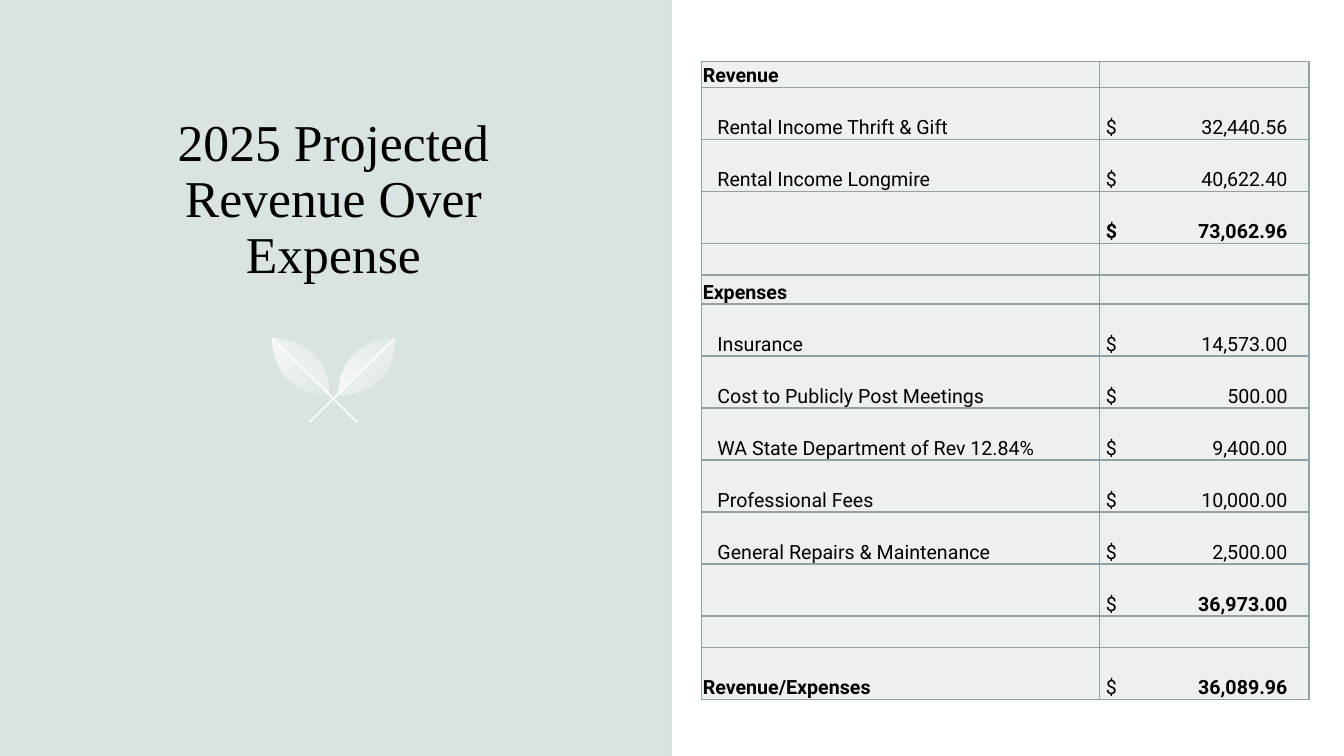
from lxml.etree import SubElement
from pptx import Presentation
from pptx.dml.color import RGBColor
from pptx.enum.shapes import MSO_CONNECTOR as Line, MSO_SHAPE as Shape
from pptx.enum.text import MSO_ANCHOR as Anchor, PP_ALIGN as Align
from pptx.oxml import parse_xml
from pptx.oxml.ns import nsdecls, qn
from pptx.util import Cm, Pt

COLORS = {"mist": "DAE3E3", "white": "FFFFFF", "black": "000000",
          "cell": "EEF0F0", "border": "8FA3A3"}

# label, indented, amount, bold amount, bold dollar sign, row height in cm
TALL = 1.31
ROWS = [
    ("Revenue", False, "", False, False, 0.66),
    ("Rental Income Thrift & Gift", True, "32,440.56", False, False, TALL),
    ("Rental Income Longmire", True, "40,622.40", False, False, TALL),
    ("", False, "73,062.96", True, True, TALL),
    ("", False, "", False, False, 0.79),
    ("Expenses", False, "", False, False, 0.73),
    ("Insurance", True, "14,573.00", False, False, TALL),
    ("Cost to Publicly Post Meetings", True, "500.00", False, False, TALL),
    ("WA State Department of Rev 12.84%", True, "9,400.00", False, False, TALL),
    ("Professional Fees", True, "10,000.00", False, False, TALL),
    ("General Repairs & Maintenance", True, "2,500.00", False, False, TALL),
    ("", False, "36,973.00", True, False, TALL),
    ("", False, "", False, False, 0.79),
    ("Revenue/Expenses", False, "36,089.96", True, False, TALL),
]

# Upper half of the right leaf: two Bezier curves from tip to base, in cm
LEAF_CURVES = [
    [(9.93, 8.53), (9.58, 8.51), (9.19, 8.64), (8.92, 8.92)],
    [(8.92, 8.92), (8.64, 9.19), (8.51, 9.55), (8.53, 9.93)],
]
STEM = [(7.8, 10.64), (9.93, 8.53)]
MIDRIB_SUM = 18.46   # x + y along the midrib
SPRIG_SUM = 16.8     # x of a point plus x of its mirror image


def rgb(name):
    return RGBColor.from_string(COLORS[name])


def add_run(p, text, size=14, font="Roboto", color="black", bold=False):
    r = p.add_run()
    r.text = text
    r.font.size, r.font.name, r.font.bold = Pt(size), font, bold
    r.font.color.rgb = rgb(color)


def add_title(s, text):
    sp = s.shapes.title
    sp.left, sp.top, sp.width, sp.height = Cm(2.74), Cm(3.02), Cm(11.33), Cm(4.27)
    tf = sp.text_frame
    tf.word_wrap, tf.vertical_anchor = True, Anchor.BOTTOM
    p = tf.paragraphs[0]
    p.alignment, p.line_spacing = Align.CENTER, 0.9
    add_run(p, text, size=36.9, font="Times New Roman")


def add_panel(s, x, y, w, h, color):
    sp = s.shapes.add_shape(Shape.RECTANGLE, Cm(x), Cm(y), Cm(w), Cm(h))
    sp.shadow.inherit = False
    sp.fill.solid()
    sp.fill.fore_color.rgb = rgb(color)
    sp.line.fill.background()


def bezier(points, steps=12):
    a, b, c, d = points
    for i in range(steps + 1):
        t = i / steps
        u = 1 - t
        yield tuple(u**3 * a[k] + 3 * u*u*t * b[k] + 3 * u*t*t * c[k] + t**3 * d[k]
                    for k in (0, 1))


def across_midrib(points):
    return [(MIDRIB_SUM - y, MIDRIB_SUM - x) for x, y in points]


def across_sprig(points):
    return [(SPRIG_SUM - x, y) for x, y in points]


def add_leaf_half(group, points, angle, end_alpha):
    outline = [(Cm(x), Cm(y)) for x, y in points]
    builder = group.shapes.build_freeform(*outline[0], scale=1.0)
    builder.add_line_segments(outline[1:], close=True)
    sp = builder.convert_to_shape()
    sp.shadow.inherit = False
    sp.line.fill.background()
    stops = "".join(
        f'<a:gs pos="{pos}000"><a:srgbClr val="{COLORS["white"]}">'
        f'<a:alpha val="{alpha}000"/></a:srgbClr></a:gs>'
        for pos, alpha in ((0, 80), (100, end_alpha)))
    grad = parse_xml(f'<a:gradFill {nsdecls("a")} rotWithShape="1"><a:gsLst>{stops}</a:gsLst>'
                     f'<a:lin ang="{angle * 60000}" scaled="0"/></a:gradFill>')
    sp.element.spPr.find(qn("a:custGeom")).addnext(grad)


def add_stem(group, points):
    (x1, y1), (x2, y2) = points
    cn = group.shapes.add_connector(Line.STRAIGHT, Cm(x1), Cm(y1), Cm(x2), Cm(y2))
    cn.line.color.rgb, cn.line.width = rgb("white"), Pt(1)
    SubElement(cn.element.spPr, qn("a:effectLst"))


def add_sprig(s):
    group = s.shapes.add_group_shape()
    upper = [pt for curve in LEAF_CURVES for pt in bezier(curve)]
    for place in (list, across_sprig):
        add_leaf_half(group, place(upper), 315, 20)
        add_leaf_half(group, place(across_midrib(upper)), 45, 10)
        add_stem(group, place(STEM))


def format_cell(cell, indent):
    cell.vertical_anchor = Anchor.BOTTOM
    cell.margin_left, cell.margin_bottom = Cm(indent), 0
    cell.margin_right = cell.margin_top = Cm(0.03)
    tc_pr = cell._tc.get_or_add_tcPr()
    for side in ("lnL", "lnR", "lnT", "lnB"):
        ln = SubElement(tc_pr, qn(f"a:{side}"), w=str(Pt(1)))
        SubElement(SubElement(ln, qn("a:solidFill")), qn("a:srgbClr"), val=COLORS["border"])
    cell.fill.solid()
    cell.fill.fore_color.rgb = rgb("cell")
    return cell.text_frame.paragraphs[0]


def fill_label(cell, text, indented):
    p = format_cell(cell, 0.4 if indented else 0.03)
    if text:
        add_run(p, text, bold=not indented)
    else:
        SubElement(p._p, qn("a:endParaRPr"), sz="1400")


def fill_amount(cell, amount, bold, bold_sign):
    p = format_cell(cell, 0.16)
    if amount:
        tabs = SubElement(p._p.get_or_add_pPr(), qn("a:tabLst"))
        SubElement(tabs, qn("a:tab"), pos=str(Cm(4.58)), algn="r")
        add_run(p, "$\t", bold=bold_sign)
        add_run(p, amount, bold=bold)
    else:
        SubElement(p._p, qn("a:endParaRPr"), sz="1400")


def add_budget_table(s):
    height = sum(row[-1] for row in ROWS)
    frame = s.shapes.add_table(len(ROWS), 2, Cm(17.68), Cm(1.55), Cm(15.31), Cm(height))
    table = frame.table
    table.first_row = table.horz_banding = False
    table.columns[0].width, table.columns[1].width = Cm(10.03), Cm(5.28)
    for i, (label, indented, amount, bold, bold_sign, row_height) in enumerate(ROWS):
        table.rows[i].height = Cm(row_height)
        fill_label(table.cell(i, 0), label, indented)
        fill_amount(table.cell(i, 1), amount, bold, bold_sign)


def main():
    prs = Presentation()
    prs.slide_width, prs.slide_height = Cm(33.87), Cm(19.05)
    s = prs.slides.add_slide(prs.slide_layouts[5])
    s.background.fill.solid()
    s.background.fill.fore_color.rgb = rgb("mist")

    # Left half: title and sprig
    add_title(s, "2025 Projected Revenue Over Expense")
    add_sprig(s)

    # Right half: budget on a white panel
    add_panel(s, 16.93, 0, 16.94, 19.05, "white")
    add_budget_table(s)

    prs.save("out.pptx")


if __name__ == "__main__":
    main()
